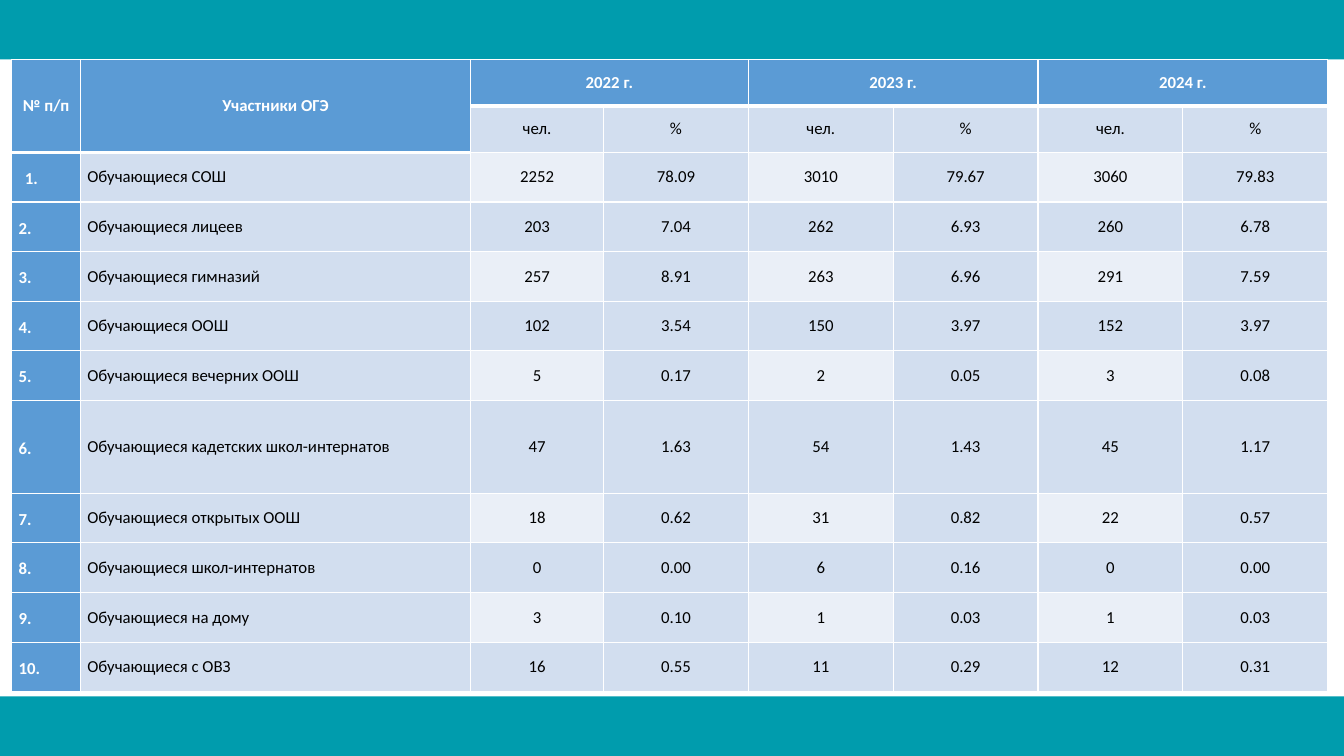
from dataclasses import dataclass

from lxml.etree import SubElement
from pptx import Presentation
from pptx.dml.color import RGBColor
from pptx.enum.shapes import MSO_SHAPE as Shape
from pptx.enum.text import MSO_ANCHOR as Anchor, PP_ALIGN as Align
from pptx.oxml.ns import qn
from pptx.util import Cm, Pt

YEARS = ["2022 г.", "2023 г.", "2024 г."]
MEASURES = ["чел.", "%"]
PARTICIPANTS = [
    ("Обучающиеся СОШ", "2252", "78.09", "3010", "79.67", "3060", "79.83"),
    ("Обучающиеся лицеев", "203", "7.04", "262", "6.93", "260", "6.78"),
    ("Обучающиеся гимназий", "257", "8.91", "263", "6.96", "291", "7.59"),
    ("Обучающиеся ООШ", "102", "3.54", "150", "3.97", "152", "3.97"),
    ("Обучающиеся вечерних ООШ", "5", "0.17", "2", "0.05", "3", "0.08"),
    ("Обучающиеся кадетских школ-интернатов", "47", "1.63", "54", "1.43", "45", "1.17"),
    ("Обучающиеся открытых ООШ", "18", "0.62", "31", "0.82", "22", "0.57"),
    ("Обучающиеся школ-интернатов", "0", "0.00", "6", "0.16", "0", "0.00"),
    ("Обучающиеся на дому", "3", "0.10", "1", "0.03", "1", "0.03"),
    ("Обучающиеся с ОВЗ", "16", "0.55", "11", "0.29", "12", "0.31"),
]
TALL_ROW = 7

SLIDE_WIDTH, SLIDE_HEIGHT, BAND_HEIGHT = Cm(33.87), Cm(19.05), Cm(1.5)
TABLE_LEFT, TABLE_TOP = Cm(0.3), Cm(1.5)
COLUMN_WIDTHS = [Cm(1.73), Cm(9.83), Cm(3.35)] + [Cm(3.65)] * 5
HEADER_HEIGHT, ROW_HEIGHT, TALL_HEIGHT = Cm(1.17), Cm(1.25), Cm(2.34)
SIDE_MARGIN, FIRST_NUMBER_MARGIN = Cm(0.17), Cm(0.33)


@dataclass(frozen=True)
class Theme:
    band: str = "009CAD"
    header: str = "5B9BD5"
    cell: str = "D2DEEF"
    light_cell: str = "EAEFF7"
    border: str = "FFFFFF"
    header_text: str = "FFFFFF"
    text: str = "000000"
    font: str = "Calibri"
    size: int = 12
    thin: int = 1
    thick: int = 3


THEME = Theme()


def add_band(slide, top):
    band = slide.shapes.add_shape(Shape.RECTANGLE, 0, top, SLIDE_WIDTH, BAND_HEIGHT)
    band.shadow.inherit = False
    band.fill.solid()
    band.fill.fore_color.rgb = RGBColor.from_string(THEME.band)
    band.line.fill.background()


def set_borders(cell, top, bottom):
    """Draw all four edges; top and bottom are widths in points."""
    properties = cell._tc.get_or_add_tcPr()
    widths = {"a:lnL": THEME.thin, "a:lnR": THEME.thin, "a:lnT": top, "a:lnB": bottom}
    for tag, width in widths.items():
        line = SubElement(properties, qn(tag), w=str(Pt(width)))
        fill = SubElement(line, qn("a:solidFill"))
        SubElement(fill, qn("a:srgbClr"), val=THEME.border)


def fill_color(row, column):
    if row == 0 or column == 0 or (row == 1 and column == 1):
        return THEME.header
    is_light = row > 1 and row % 2 == 0 and column > 1 and column % 2 == 0
    return THEME.light_cell if is_light else THEME.cell


def style_cell(cell, row, column):
    set_borders(
        cell,
        top=THEME.thick if row == 1 and column > 1 or row == 2 and column < 2 else THEME.thin,
        bottom=THEME.thick if row == 0 or row == 1 and column < 2 else THEME.thin,
    )
    cell.fill.solid()
    cell.fill.fore_color.rgb = RGBColor.from_string(fill_color(row, column))
    cell.vertical_anchor = Anchor.MIDDLE
    cell.margin_left = FIRST_NUMBER_MARGIN if (row, column) == (2, 0) else SIDE_MARGIN
    cell.margin_right = SIDE_MARGIN
    cell.margin_top = cell.margin_bottom = 0


def write_cell(cell, text, row, column):
    is_header = row == 0 or column == 0
    paragraph = cell.text_frame.paragraphs[0]
    paragraph.alignment = Align.LEFT if row > 1 and column < 2 else Align.CENTER
    if row > 1 and column == 0:
        paragraph.line_spacing = 1.15
    run = paragraph.add_run()
    run.text = text
    run.font.name = THEME.font
    run.font.size = Pt(THEME.size)
    run.font.bold = is_header
    run.font.color.rgb = RGBColor.from_string(THEME.header_text if is_header else THEME.text)


def add_participants_table(slide):
    year_cells = [text for year in YEARS for text in (year, "")]
    rows = [["№ п/п", "Участники ОГЭ", *year_cells], ["", "", *MEASURES * len(YEARS)]]
    rows += [[f"{number}.", *values] for number, values in enumerate(PARTICIPANTS, 1)]
    heights = [HEADER_HEIGHT] * 2 + [ROW_HEIGHT] * len(PARTICIPANTS)
    heights[TALL_ROW] = TALL_HEIGHT

    table = slide.shapes.add_table(
        len(rows), len(COLUMN_WIDTHS), TABLE_LEFT, TABLE_TOP, sum(COLUMN_WIDTHS), sum(heights)
    ).table
    table.horz_banding = False
    for column, width in zip(table.columns, COLUMN_WIDTHS):
        column.width = width
    for row, height in zip(table.rows, heights):
        row.height = height
    for row, texts in enumerate(rows):
        for column, text in enumerate(texts):
            cell = table.cell(row, column)
            style_cell(cell, row, column)
            if text:
                write_cell(cell, text, row, column)

    for column in range(2):
        table.cell(0, column).merge(table.cell(1, column))
    for column in range(2, len(COLUMN_WIDTHS), len(MEASURES)):
        table.cell(0, column).merge(table.cell(0, column + 1))


def main():
    presentation = Presentation()
    presentation.slide_width, presentation.slide_height = SLIDE_WIDTH, SLIDE_HEIGHT
    slide = presentation.slides.add_slide(presentation.slide_layouts[6])
    for top in (0, SLIDE_HEIGHT - BAND_HEIGHT):
        add_band(slide, top)
    add_participants_table(slide)
    presentation.save("out.pptx")


if __name__ == "__main__":
    main()
